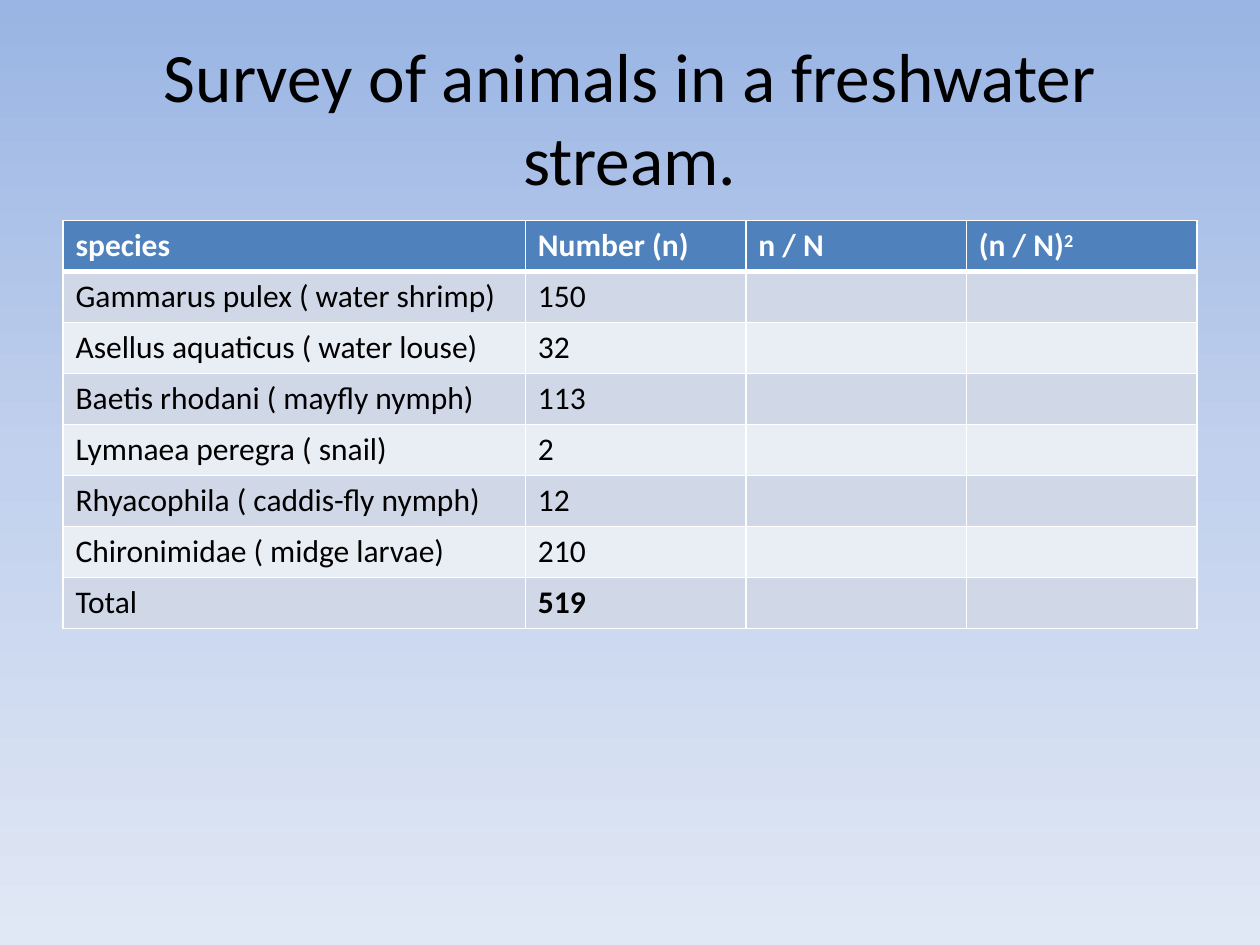
from dataclasses import dataclass

from lxml.etree import SubElement
from pptx import Presentation
from pptx.dml.color import RGBColor
from pptx.enum.text import MSO_ANCHOR, PP_ALIGN
from pptx.oxml.ns import qn
from pptx.util import Inches, Pt


@dataclass(frozen=True)
class Theme:
    font: str = "Calibri"
    title: float = 39.6
    body: float = 18
    ink: str = "000000"
    white: str = "FFFFFF"
    head: str = "4F81BD"
    bands: tuple = ("D0D8E8", "E9EDF4")
    sky: tuple = ((0, "9AB5E4"), (50, "C2D1ED"), (100, "E1E8F5"))


THEME = Theme()
WIDTHS = (3.67, 1.75, 1.75, 1.83)
HEADS = ("species", "Number (n)", "n / N", "(n / N)")
COUNTS = (
    ("Gammarus pulex ( water shrimp)", "150"),
    ("Asellus aquaticus ( water louse)", "32"),
    ("Baetis rhodani ( mayfly nymph)", "113"),
    ("Lymnaea peregra ( snail)", "2"),
    ("Rhyacophila ( caddis-fly nymph)", "12"),
    ("Chironimidae ( midge larvae)", "210"),
    ("Total", "519"),
)


def apply(item, form):
    for name, value in form.items():
        setattr(item, name, value)


def add_run(para, text, size, color, bold=False):
    run = para.add_run()
    run.text = text
    apply(run.font, {"name": THEME.font, "size": Pt(size), "bold": bold})
    run.font.color.rgb = RGBColor.from_string(color)
    return run


def add_color(node, color):
    SubElement(node, qn("a:srgbClr"), val=color)


def paint_sky(slide):
    fill = slide.background.fill
    fill.gradient()
    fill.gradient_angle = 270
    stops = next(slide.element.iter(qn("a:gsLst")))
    for stop in list(stops):
        stops.remove(stop)
    for spot, color in THEME.sky:
        add_color(SubElement(stops, qn("a:gs"), pos=str(spot * 1000)), color)


def add_title(slide, text):
    box = slide.shapes.add_textbox(Inches(0.5), Inches(0.3), Inches(9), Inches(1.25))
    frame = box.text_frame
    apply(frame, {"word_wrap": True, "vertical_anchor": MSO_ANCHOR.MIDDLE})
    para = frame.paragraphs[0]
    para.alignment = PP_ALIGN.CENTER
    add_run(para, text, THEME.title, THEME.ink)


def style_cell(cell, color, edges):
    props = cell._tc.get_or_add_tcPr()
    for side, width in edges.items():
        line = SubElement(props, qn(f"a:ln{side}"), w=str(Pt(width)))
        add_color(SubElement(line, qn("a:solidFill")), THEME.white)
    cell.fill.solid()
    cell.fill.fore_color.rgb = RGBColor.from_string(color)


def add_survey(slide):
    rows = (HEADS, *((name, count, "", "") for name, count in COUNTS))
    table = slide.shapes.add_table(
        len(rows), len(WIDTHS), Inches(0.5), Inches(1.75), Inches(9), Inches(3.24)
    ).table
    for column, width in zip(table.columns, WIDTHS):
        column.width = Inches(width)
    for y, row in enumerate(rows):
        head = y == 0
        fill = THEME.head if head else THEME.bands[(y - 1) % 2]
        ink = THEME.white if head else THEME.ink
        edges = {"L": 1, "R": 1, "T": 3 if y == 1 else 1, "B": 3 if head else 1}
        for x, text in enumerate(row):
            cell = table.cell(y, x)
            style_cell(cell, fill, edges)
            if text:
                bold = head or (row[0] == "Total" and x == 1)
                add_run(cell.text_frame.paragraphs[0], text, THEME.body, ink, bold)
    para = table.cell(0, 3).text_frame.paragraphs[0]
    power = add_run(para, "2", THEME.body, THEME.white, True)
    power.font._element.set("baseline", "30000")


def main():
    deck = Presentation()
    apply(deck, {"slide_width": Inches(10), "slide_height": Inches(7.5)})
    slide = deck.slides.add_slide(deck.slide_layouts[6])
    paint_sky(slide)
    add_title(slide, "Survey of animals in a freshwater stream.")
    add_survey(slide)
    deck.save("out.pptx")


if __name__ == "__main__":
    main()
